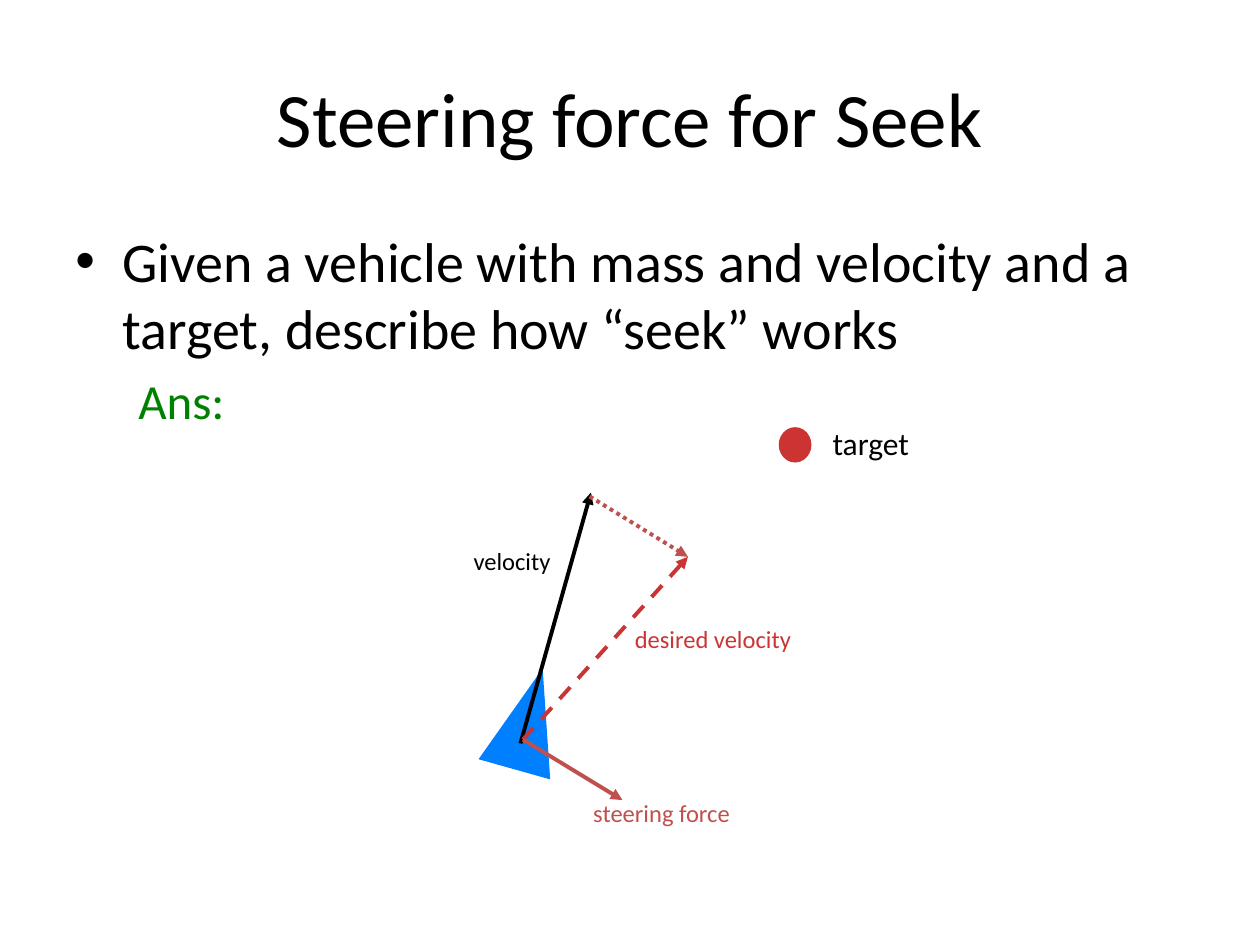
from lxml import etree
from pptx import Presentation
from pptx.dml.color import RGBColor
from pptx.enum.dml import MSO_LINE
from pptx.enum.shapes import MSO_CONNECTOR, MSO_SHAPE
from pptx.enum.text import MSO_ANCHOR, PP_ALIGN
from pptx.oxml.ns import qn
from pptx.util import Pt

BLACK, GREEN, BLUE = "000000", "008000", "0080FF"
RED, BRICK = "CC3333", "C0504D"


def rgb(value):
    return RGBColor.from_string(value)


def write(p, text, size, color, **para_format):
    r = p.add_run()
    r.text = text
    for name, value in {"name": "Calibri", "size": Pt(size)}.items():
        setattr(r.font, name, value)
    r.font.color.rgb = rgb(color)
    for name, value in para_format.items():
        setattr(p, name, value)


def indent(p, left, first=0, bullet=None):
    pPr = p._p.get_or_add_pPr()
    pPr.set("marL", str(Pt(left)))
    pPr.set("indent", str(Pt(first)))
    if bullet:
        etree.SubElement(pPr, qn("a:buFont")).set("typeface", "Arial")
        etree.SubElement(pPr, qn("a:buChar")).set("char", bullet)
    else:
        etree.SubElement(pPr, qn("a:buNone"))


def add_text(shapes, x, y, w, h):
    tf = shapes.add_textbox(Pt(x), Pt(y), Pt(w), Pt(h)).text_frame
    tf.word_wrap = True
    return tf


def add_solid(shapes, kind, x, y, w, h, color, rotation=0):
    sp = shapes.add_shape(kind, Pt(x), Pt(y), Pt(w), Pt(h))
    sp.shadow.inherit = False
    sp.fill.solid()
    sp.fill.fore_color.rgb = rgb(color)
    sp.line.fill.background()
    sp.rotation = rotation


def add_arrow(shapes, start, end, color, dash=None):
    line = shapes.add_connector(MSO_CONNECTOR.STRAIGHT, *map(Pt, start + end))
    line.line.color.rgb = rgb(color)
    line.line.width = Pt(2.25)
    if dash:
        line.line.dash_style = dash
    etree.SubElement(line.line._get_or_add_ln(), qn("a:tailEnd")).set("type", "triangle")
    etree.SubElement(line._element.spPr, qn("a:effectLst"))


def add_title(s, x, y, w, h):
    sp = s.shapes.title
    for name, value in zip(("left", "top", "width", "height"), (x, y, w, h)):
        setattr(sp, name, Pt(value))
    tf = sp.text_frame
    tf.vertical_anchor = MSO_ANCHOR.MIDDLE
    write(tf.paragraphs[0], "Steering force for Seek", 44, BLACK, alignment=PP_ALIGN.CENTER)


def add_question(s, x, y, w, h):
    tf = add_text(s.shapes, x, y, w, h)
    p = tf.paragraphs[0]
    indent(p, 27, -27, "•")
    write(p, "Given a vehicle with mass and velocity and a target, describe how “seek” works",
          32, BLACK)
    p = tf.add_paragraph()
    indent(p, 36)
    write(p, "Ans:", 28, GREEN, level=1, space_before=Pt(5.6))


def add_seek_diagram(s, x, y):
    shapes = s.shapes.add_group_shape().shapes

    def at(dx, dy):
        return x + dx, y + dy

    center, desired_tip = at(35.3, 183.6), at(129.6, 79.2)

    # Vehicle and target
    add_solid(shapes, MSO_SHAPE.ISOSCELES_TRIANGLE, *at(17.3, 141.9), 42.5, 59.8, BLUE, 15.7)
    add_solid(shapes, MSO_SHAPE.OVAL, *at(181.5, 5.1), 18.7, 20.2, RED)

    # Velocity, change of velocity, desired velocity, steering force
    for start, end, color, dash in (
        (at(33.9, 185.8), at(74.2, 42.5), BLACK, None),
        (at(73.5, 44.7), desired_tip, BRICK, MSO_LINE.ROUND_DOT),
        (center, desired_tip, RED, MSO_LINE.DASH),
        (center, at(92.2, 218.2), BRICK, None),
    ):
        add_arrow(shapes, start, end, color, dash)

    # Labels
    for text, dx, dy, w, h, size, color in (
        ("target", 205.2, 0, 80, 29.5, 18, BLACK),
        ("velocity", 0, 69.2, 62, 24.5, 14, BLACK),
        ("desired velocity", 92.2, 113.8, 174, 24.5, 14, RED),
        ("steering force", 68.4, 213.2, 188.6, 24.5, 14, BRICK),
    ):
        tf = add_text(shapes, *at(dx, dy), w, h)
        write(tf.paragraphs[0], text, size, color)


def main():
    prs = Presentation()
    prs.slide_width, prs.slide_height = Pt(720), Pt(540)
    s = prs.slides.add_slide(prs.slide_layouts[5])
    add_title(s, 36, 21.6, 648, 90)
    add_question(s, 36, 126, 648, 356.4)
    add_seek_diagram(s, 263.5, 239)
    prs.save("out.pptx")


if __name__ == "__main__":
    main()
